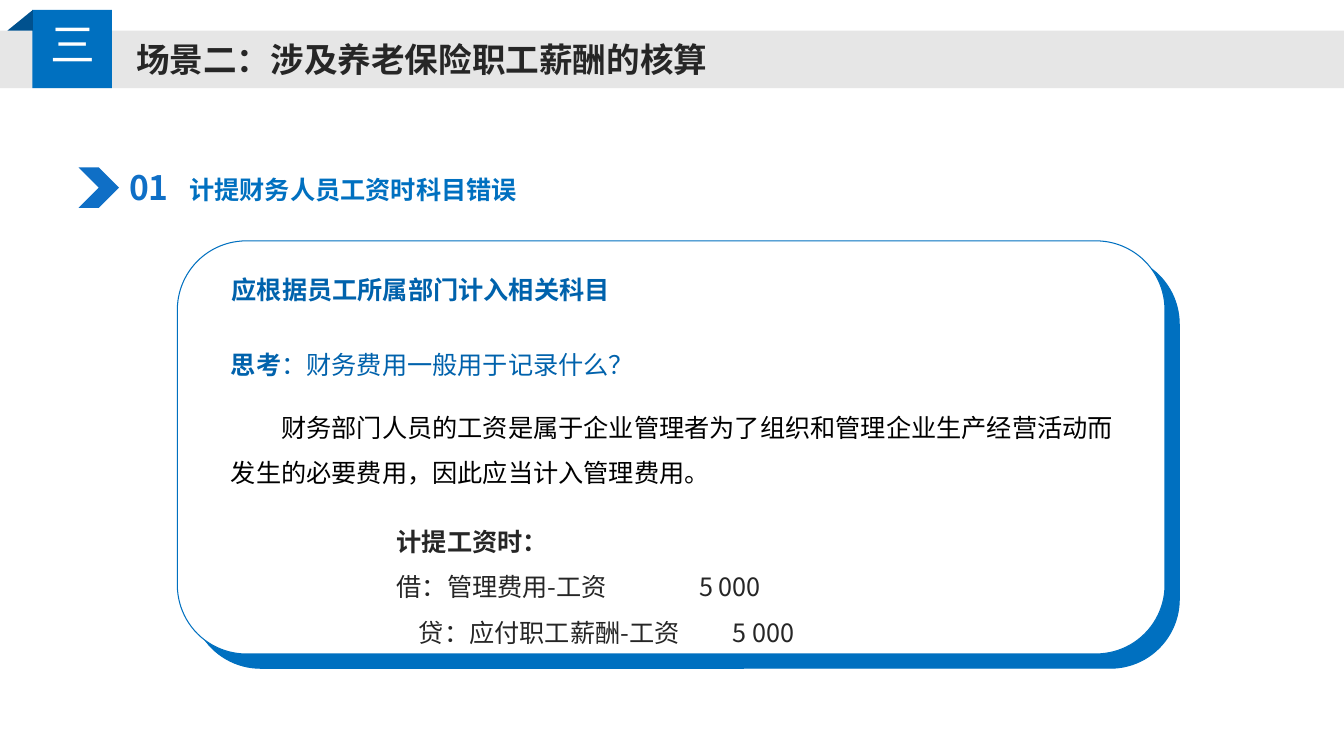
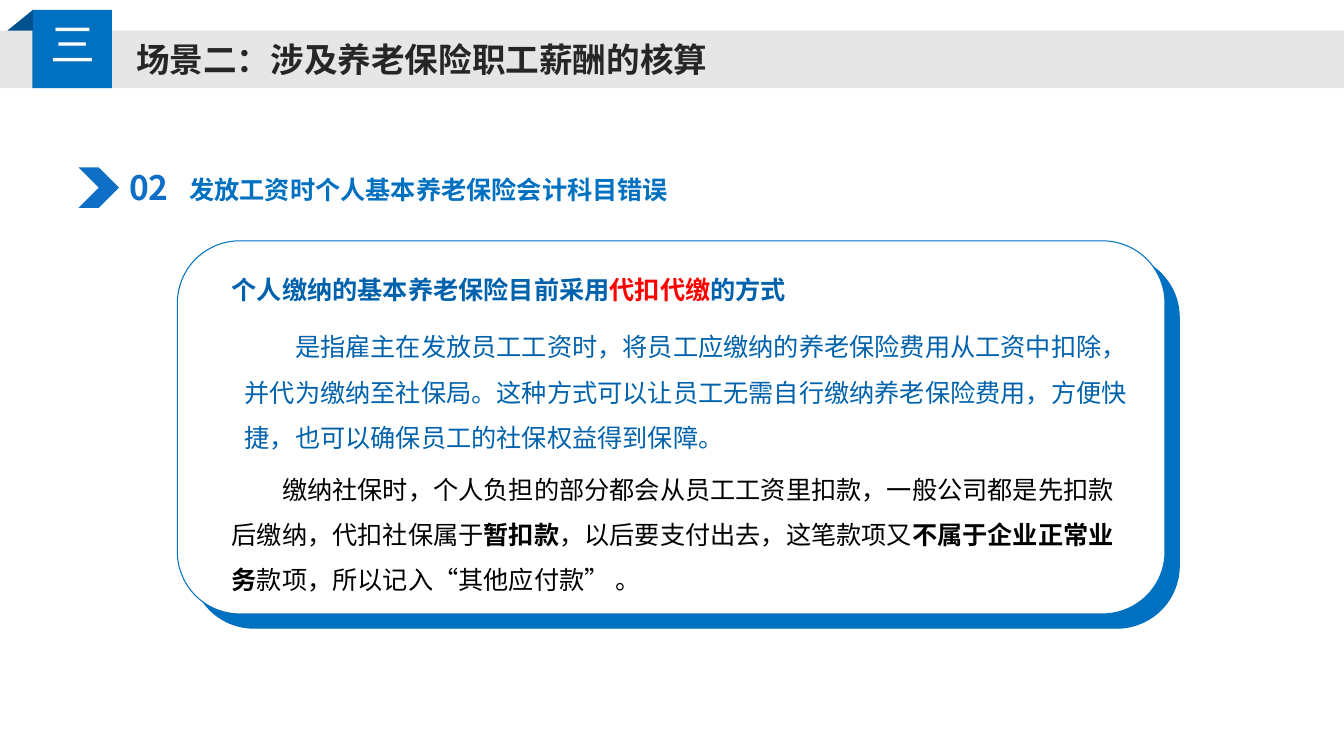
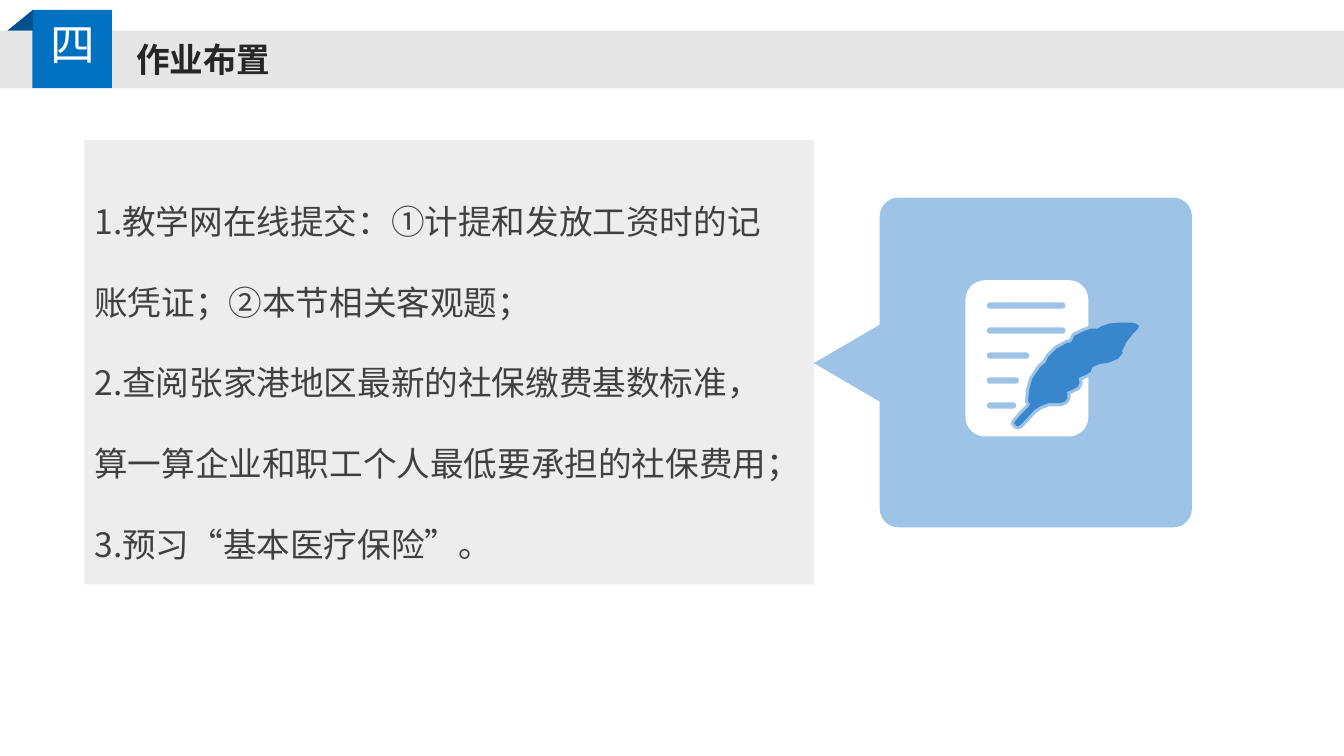
from lxml import etree
from pptx import Presentation
from pptx import util as u
from pptx.dml.color import RGBColor
from pptx.enum import shapes, text
from pptx.oxml import ns

WHITE = RGBColor(0xFF, 0xFF, 0xFF)
BLACK = RGBColor(0x00, 0x00, 0x00)
RED = RGBColor(0xFF, 0x00, 0x00)
BAND_GRAY = RGBColor(0xE6, 0xE6, 0xE6)
PANEL_GRAY = RGBColor(0xED, 0xED, 0xED)
TITLE_GRAY = RGBColor(0x26, 0x26, 0x26)
TASK_GRAY = RGBColor(0x40, 0x40, 0x40)
BLUE = RGBColor(0x00, 0x70, 0xC0)
FOLD_BLUE = RGBColor(0x00, 0x51, 0x8E)
TEXT_BLUE = RGBColor(0x00, 0x62, 0xAC)
NUMBER_BLUE = RGBColor(0x0F, 0x6F, 0xC6)
PALE_BLUE = RGBColor(0x9D, 0xC3, 0xE6)
FEATHER_BLUE = RGBColor(0x38, 0x86, 0xCC)

FONT = "Noto Sans CJK SC"
NUMERAL_FONT = "Noto Sans CJK JP"
SCENE_TITLE = "场景二：涉及养老保险职工薪酬的核算"

FEATHER = [
    (125, 3), (122, 1), (118, 0), (105, 0), (95, 1), (87, 4), (84, 6), (77, 6), (69, 9),
    (61, 13), (59, 17), (57, 20), (54, 20), (43, 26), (35, 34), (32, 40), (27, 44),
    (19, 56), (16, 67), (15, 78), (17, 81), (15, 84), (9, 90), (2, 98), (1, 100),
    (3, 102), (4, 103), (7, 102), (9, 100), (21, 87), (27, 83), (35, 80), (47, 80),
    (52, 78), (54, 75), (54, 70), (53, 69), (58, 67), (64, 64), (66, 60), (65, 55),
    (72, 52), (77, 49), (79, 44), (86, 41), (94, 40), (104, 36), (109, 30), (108, 28),
    (111, 23), (112, 20), (119, 11), (124, 6),
]


def paint(shape, fill, line=None, width=0.75):
    """Give a shape a flat fill and an optional outline."""
    shape.shadow.inherit = False
    shape.fill.solid()
    shape.fill.fore_color.rgb = fill
    if line is None:
        shape.line.fill.background()
    else:
        shape.line.color.rgb = line
        shape.line.width = u.Pt(width)
    return shape


def add_preset(slide, kind, box, fill, line=None, corner=None):
    """Add a preset shape in a box given in centimetres."""
    shape = slide.shapes.add_shape(kind, *map(u.Cm, box))
    if corner is not None:
        shape.adjustments[0] = corner
    return paint(shape, fill, line)


def add_outline(slide, points, unit, left, top, fill, **line):
    """Add a closed polygon whose points are counted in the given unit."""
    builder = slide.shapes.build_freeform(*points[0], scale=u.Cm(unit))
    builder.add_line_segments(points[1:], close=True)
    return paint(builder.convert_to_shape(u.Cm(left), u.Cm(top)), fill, **line)


def add_run(paragraph, content, size, color, bold=False, font=FONT):
    """Append a run with Latin and East Asian typefaces set alike."""
    run = paragraph.add_run()
    run.text = content
    run.font.size = u.Pt(size)
    run.font.bold = bold
    run.font.color.rgb = color
    run.font.name = font
    properties = run.font._element
    etree.SubElement(properties, ns.qn("a:ea")).set("typeface", font)


def write(frame, paragraphs, spacing=1.0, align=text.PP_ALIGN.LEFT, indent=0,
          anchor=text.MSO_ANCHOR.TOP, insets=(0.25, 0.13, 0.25, 0.13), **style):
    """Fill a text frame; a paragraph is a string or a list of (text, changes)."""
    frame.word_wrap = True
    frame.vertical_anchor = anchor
    (frame.margin_left, frame.margin_top,
     frame.margin_right, frame.margin_bottom) = map(u.Cm, insets)
    for index, content in enumerate(paragraphs):
        paragraph = frame.add_paragraph() if index else frame.paragraphs[0]
        paragraph.alignment = align
        paragraph.line_spacing = spacing
        if indent:
            paragraph._p.get_or_add_pPr().set("indent", str(u.Cm(indent)))
        runs = [(content, {})] if isinstance(content, str) else content
        for words, changes in runs:
            add_run(paragraph, words, **{**style, **changes})


def add_text(slide, box, paragraphs, **style):
    """Add a text box in a box given in centimetres."""
    frame = slide.shapes.add_textbox(*map(u.Cm, box)).text_frame
    write(frame, paragraphs, **style)
    return frame


def set_tabs(paragraph, stops):
    """Set left tab stops, given in centimetres."""
    tabs = etree.SubElement(paragraph._p.get_or_add_pPr(), ns.qn("a:tabLst"))
    for stop in stops:
        etree.SubElement(tabs, ns.qn("a:tab"), pos=str(u.Cm(stop)), algn="l")


def add_page(presentation, numeral, title):
    """Add a slide with the title band and the folded numeral tab."""
    slide = presentation.slides.add_slide(presentation.slide_layouts[6])
    rectangle = shapes.MSO_SHAPE.RECTANGLE
    add_preset(slide, rectangle, (0, 0.77, 33.87, 1.45), BAND_GRAY)
    add_preset(slide, rectangle, (0.82, 0.25, 2, 1.97), BLUE)
    add_outline(slide, [(0, 52), (64, 0), (64, 52)], 0.01, 0.19, 0.25, FOLD_BLUE)
    add_text(slide, (3.18, 0.84, 28, 1.27), [title], size=24, color=TITLE_GRAY, bold=True)
    add_text(slide, (1.02, 0.3, 1.7, 1.63), [numeral], size=32, color=WHITE,
             font=NUMERAL_FONT)
    return slide


def add_heading(slide, left, top, number, heading):
    """Place a chevron, a number and a heading in one row."""
    add_text(slide, (left + 0.71, top - 0.51, 2.13, 2.01), [number], size=24,
             color=NUMBER_BLUE, bold=True, align=text.PP_ALIGN.CENTER,
             anchor=text.MSO_ANCHOR.MIDDLE)
    add_preset(slide, shapes.MSO_SHAPE.CHEVRON, (left, top, 1.02, 1.02), NUMBER_BLUE)
    add_text(slide, (left + 2.54, top - 0.18, 22, 1.24), [heading], size=18,
             color=BLUE, bold=True, spacing=1.3)


def add_card(slide, left, top, width, height):
    """Draw a white rounded card above its blue offset base."""
    for offset, fill in ((0.36, BLUE), (0, WHITE)):
        add_preset(slide, shapes.MSO_SHAPE.ROUNDED_RECTANGLE,
                   (left + offset, top + offset, width, height), fill, BLUE, 0.167)


def add_card_text(slide, card, place, paragraphs, color=TEXT_BLUE, **style):
    """Write body text at a place measured from the corner of the card."""
    left, top, width, height = place
    return add_text(slide, (card[0] + left, card[1] + top, width, height), paragraphs,
                    size=18, color=color, spacing=1.5, **style)


def build_accrual(presentation):
    """Build the slide on accruing wages."""
    slide = add_page(presentation, "三", SCENE_TITLE)
    add_heading(slide, 1.98, 4.22, "01", "计提财务人员工资时科目错误")
    card = (4.47, 6.07, 24.89, 10.41)
    add_card(slide, *card)
    add_card_text(slide, card, (1.12, 0.33, 22.83, 1.27),
                  ["应根据员工所属部门计入相关科目"], bold=True)
    add_card_text(slide, card, (1.1, 2.21, 22.83, 1.27),
                  [[("思考", {"bold": True}), ("：财务费用一般用于记录什么？", {})]])
    add_card_text(slide, card, (1.1, 3.81, 22.73, 2.44),
                  ["财务部门人员的工资是属于企业管理者为了组织和管理企业生产经营活动而"
                   "发生的必要费用，因此应当计入管理费用。"], color=BLACK, indent=1.27)
    entries = add_card_text(slide, card, (5.28, 6.68, 16.94, 3.71),
                            [[("计提工资时：", {"bold": True})],
                             "借：管理费用-工资\t5 000",
                             "\t贷：应付职工薪酬-工资\t5 000"], color=TITLE_GRAY)
    set_tabs(entries.paragraphs[1], [7.62])
    set_tabs(entries.paragraphs[2], [0.56, 8.46])


def build_payment(presentation):
    """Build the slide on paying wages."""
    slide = add_page(presentation, "三", SCENE_TITLE)
    add_heading(slide, 1.98, 4.22, "02", "发放工资时个人基本养老保险会计科目错误")
    card = (4.47, 6.07, 24.89, 9.4)
    add_card(slide, *card)
    add_card_text(slide, card, (1.12, 0.33, 22.83, 1.27),
                  [[("个人缴纳的基本养老保险目前采用", {}), ("代扣代缴", {"color": RED}),
                    ("的方式", {})]], bold=True)
    add_card_text(slide, card, (1.45, 1.78, 22.83, 3.58),
                  ["是指雇主在发放员工工资时，将员工应缴纳的养老保险费用从工资中扣除，"
                   "并代为缴纳至社保局。这种方式可以让员工无需自行缴纳养老保险费用，"
                   "方便快捷，也可以确保员工的社保权益得到保障。"], indent=1.27)
    strong = {"bold": True}
    add_card_text(slide, card, (1.12, 5.36, 22.73, 3.71),
                  [[("缴纳社保时，个人负担的部分都会从员工工资里扣款，一般公司都是先扣款"
                     "后缴纳，代扣社保属于", {}), ("暂扣款", strong),
                    ("，以后要支付出去，这笔款项又", {}), ("不属于企业正常业务", strong),
                    ("款项，所以记入“其他应付款” 。", {})]], color=BLACK, indent=1.27)


def add_callout(slide, left, top, width, height):
    """Draw the speech panel with a sheet of paper and a feather."""
    rounded = shapes.MSO_SHAPE.ROUNDED_RECTANGLE
    add_preset(slide, rounded, (left, top, width, height), PALE_BLUE, corner=0.06)
    pointer = add_preset(slide, shapes.MSO_SHAPE.ISOSCELES_TRIANGLE,
                         (left - 1.8, top + 3.33, 1.96, 1.68), PALE_BLUE)
    pointer.rotation = 270
    add_preset(slide, rounded, (left + 2.16, top + 2.08, 3.1, 3.94), WHITE, corner=0.16)
    for row, length in enumerate((1.98, 1.98, 1.07, 0.81, 0.74)):
        add_preset(slide, rounded, (left + 2.7, top + 2.64 + 0.63 * row, length, 0.16),
                   PALE_BLUE, corner=0.5)
    for fill, line in ((PALE_BLUE, {"line": PALE_BLUE, "width": 4.5}), (FEATHER_BLUE, {})):
        add_outline(slide, FEATHER, 0.0254, left + 3.36, top + 3.15, fill, **line)


def build_homework(presentation):
    """Build the homework slide."""
    slide = add_page(presentation, "四", "作业布置")
    panel = add_preset(slide, shapes.MSO_SHAPE.RECTANGLE, (2.13, 3.53, 18.39, 11.2),
                       PANEL_GRAY)
    write(panel.text_frame,
          ["1.教学网在线提交：①计提和发放工资时的记账凭证；②本节相关客观题；",
           "2.查阅张家港地区最新的社保缴费基数标准，算一算企业和职工个人最低要承担的社保费用；",
           "3.预习“基本医疗保险”。"],
          size=24, color=TASK_GRAY, spacing=2.0, anchor=text.MSO_ANCHOR.MIDDLE,
          insets=(0.25, 0.13, 0.89, 0.13))
    add_callout(slide, 22.17, 4.98, 7.87, 8.31)


def main():
    """Build and save the presentation."""
    presentation = Presentation()
    presentation.slide_width = u.Cm(33.87)
    presentation.slide_height = u.Cm(19.05)
    build_accrual(presentation)
    build_payment(presentation)
    build_homework(presentation)
    presentation.save("out.pptx")


if __name__ == "__main__":
    main()
